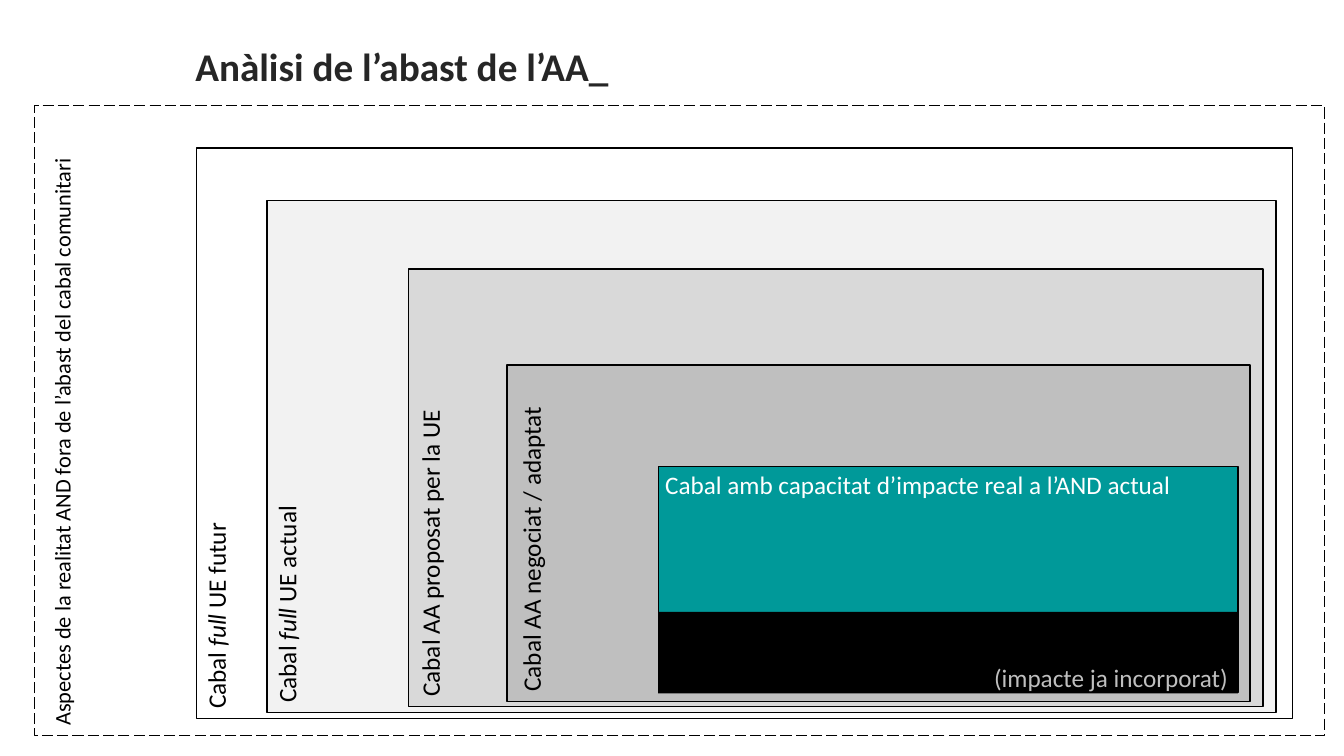
"""Nested scopes of the EU acquis covered by the association agreement."""
import pptx
import pptx.dml.color
import pptx.enum.dml
import pptx.enum.shapes
import pptx.enum.text
import pptx.util

WIDTH, HEIGHT = pptx.util.Inches(13.333), pptx.util.Inches(7.5)
LABEL_DEPTH = 7.73
LEFT = pptx.enum.text.PP_ALIGN.LEFT
RIGHT = pptx.enum.text.PP_ALIGN.RIGHT

# Scope: left, top, width, height, fill, label axis, label length, size, (text, italic) runs
SCOPES = [
    (2.55, 14, 96, 83.33, "FFFFFF", 4.58, 82.4, 16,
     [("Aspectes de la realitat AND fora de l’abast del cabal comunitari", False)]),
    (14.63, 19.6, 81.53, 75.47, "FFFFFF", 16.05, 28.8, 18,
     [("Cabal ", False), ("full ", True), ("UE futur", False)]),
    (19.88, 26.53, 75.08, 67.73, "F2F2F2", 21.3, 28.8, 18,
     [("Cabal ", False), ("full ", True), ("UE actual", False)]),
    (30.38, 35.6, 63.6, 57.87, "D9D9D9", 31.99, 41.47, 18,
     [("Cabal AA proposat per la UE", False)]),
    (37.73, 48.27, 55.28, 44.53, "BFBFBF", 39.49, 41.47, 18,
     [("Cabal AA negociat / adaptat", False)]),
]


def across(share):
    """Return a percentage of the slide width."""
    return round(WIDTH * share / 100)


def down(share):
    """Return a percentage of the slide height."""
    return round(HEIGHT * share / 100)


def colour(code):
    """Return the colour for a hex string."""
    return pptx.dml.color.RGBColor.from_string(code)


def add_area(slide, left, top, width, height, fill, outline="000000"):
    """Add a filled rectangle placed by slide shares."""
    area = slide.shapes.add_shape(
        pptx.enum.shapes.MSO_SHAPE.RECTANGLE,
        across(left), down(top), across(width), down(height))
    area.shadow.inherit = False
    area.fill.solid()
    area.fill.fore_color.rgb = colour(fill)
    if outline:
        area.line.color.rgb = colour(outline)
        area.line.width = pptx.util.Pt(1)
    else:
        area.line.fill.background()
    return area


def write(holder, runs, size, ink, align=LEFT, bold=None):
    """Write one vertically centred paragraph of (text, italic) runs."""
    frame = holder.text_frame
    frame.word_wrap = True
    frame.vertical_anchor = pptx.enum.text.MSO_ANCHOR.MIDDLE
    paragraph = frame.paragraphs[0]
    paragraph.alignment = align
    for text, italic in runs:
        run = paragraph.add_run()
        run.text = text
        run.font.name = "Calibri"
        run.font.size = pptx.util.Pt(size)
        run.font.color.rgb = colour(ink)
        run.font.italic = italic
        run.font.bold = bold


def add_scope(slide, left, top, width, height, fill, axis, length, size, runs):
    """Add a scope rectangle with a label reading upwards from its base."""
    scope = add_area(slide, left, top, width, height, fill)
    span, depth = down(length), down(LABEL_DEPTH)
    middle = down(top + height) - span // 2
    label = slide.shapes.add_textbox(
        across(axis) - span // 2, middle - depth // 2, span, depth)
    label.rotation = 270
    write(label, runs, size, "000000")
    return scope


def add_caption(slide, left, top, text, ink, align=LEFT):
    """Add a horizontal caption as wide as the impact area."""
    caption = slide.shapes.add_textbox(
        across(left), down(top), across(43.13), down(6.8))
    write(caption, [(text, False)], 18, ink, align)


def main():
    """Build and save the slide."""
    deck = pptx.Presentation()
    deck.slide_width, deck.slide_height = WIDTH, HEIGHT
    slide = deck.slides.add_slide(deck.slide_layouts[6])

    scopes = [add_scope(slide, *scope) for scope in SCOPES]
    scopes[0].line.dash_style = pptx.enum.dml.MSO_LINE.LONG_DASH

    add_area(slide, 48.98, 61.73, 43.13, 29.87, "009999")
    add_caption(slide, 48.75, 60.67,
                "Cabal amb capacitat d’impacte real a l’AND actual", "FFFFFF")
    add_area(slide, 48.98, 80.93, 43.13, 10.8, "000000", None)
    add_caption(slide, 48.98, 86.27, "(impacte ja incorporat)", "BFBFBF", RIGHT)

    title = add_area(slide, 13.8, 5.07, 85.58, 7.33, "FFFFFF", "FFFFFF")
    write(title, [("Anàlisi de l’abast de l’AA_", False)], 28, "262626", bold=True)
    deck.save("out.pptx")


if __name__ == "__main__":
    main()
